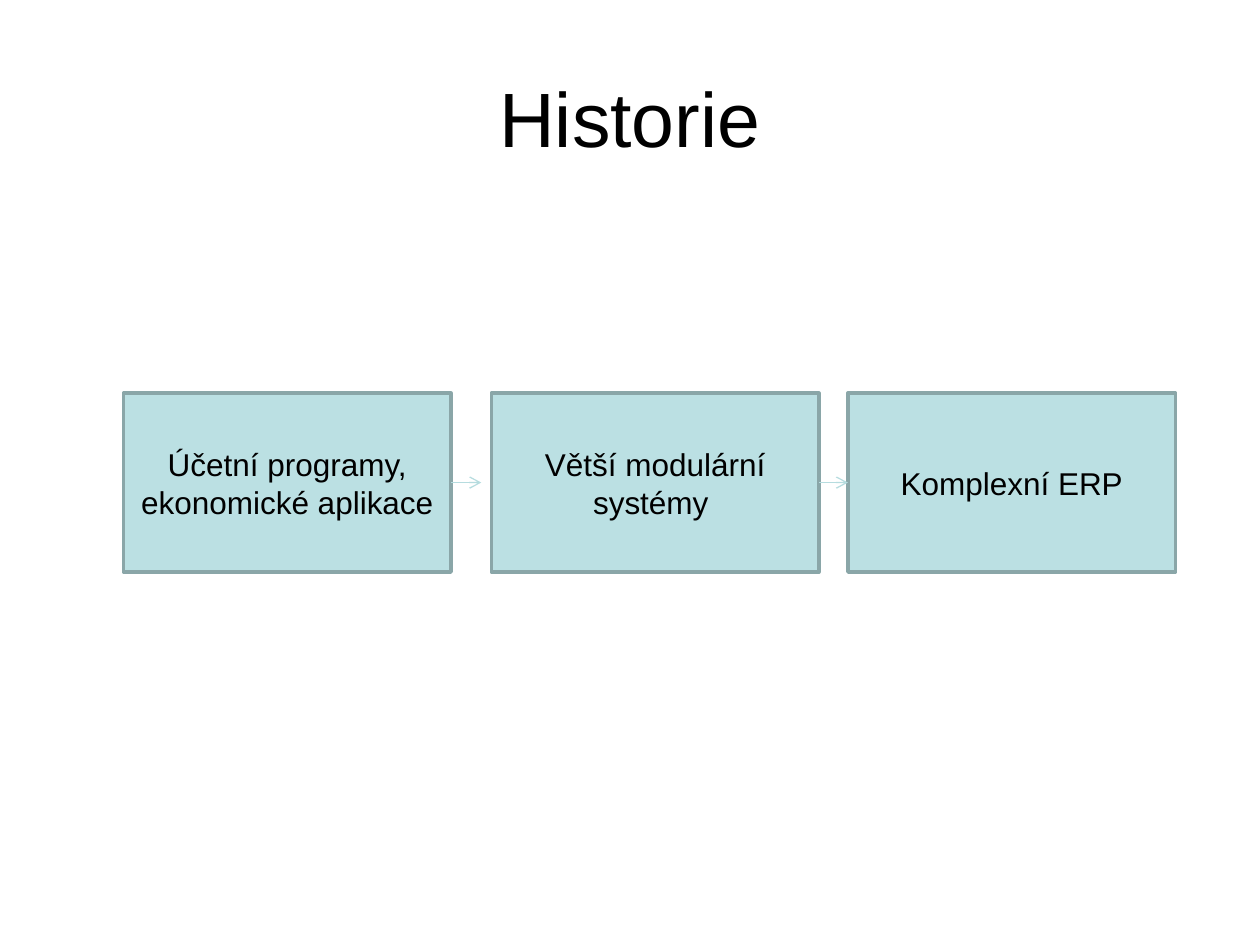
import pptx
import pptx.util
import pptx.dml.color
import pptx.enum.shapes
import pptx.enum.text
import pptx.oxml
import pptx.oxml.ns
from dataclasses import dataclass
from pptx.util import Inches


@dataclass(frozen=True)
class Theme:
    font: str = "Arial"
    text: str = "000000"
    fill: str = "BBE0E3"
    border: str = "8AA6A8"
    arrow: str = "B6DCDF"
    title_size: int = 44
    step_size: int = 18


theme = Theme()


def color(value):
    return pptx.dml.color.RGBColor.from_string(value)


def write_centered(box, text, size):
    frame = box.text_frame
    frame.word_wrap = True
    frame.vertical_anchor = pptx.enum.text.MSO_ANCHOR.MIDDLE
    frame.text = text
    para = frame.paragraphs[0]
    para.alignment = pptx.enum.text.PP_ALIGN.CENTER
    span = para.runs[0]
    span.font.name = theme.font
    span.font.size = pptx.util.Pt(size)
    span.font.color.rgb = color(theme.text)


deck = pptx.Presentation()
deck.slide_width, deck.slide_height = Inches(10), Inches(7.5)
slide = deck.slides.add_slide(deck.slide_layouts[6])

# Title
title = slide.shapes.add_textbox(Inches(0.5), Inches(0.3), Inches(9), Inches(1.25))
write_centered(title, "Historie", theme.title_size)

# Development steps
step_top, step_width, step_height = 3.12, 2.6, 1.42
steps = [
    (0.98, "Účetní programy, ekonomické aplikace"),
    (3.9, "Větší modulární systémy "),
    (6.73, "Komplexní ERP"),
]
for left, text in steps:
    step = slide.shapes.add_shape(
        pptx.enum.shapes.MSO_SHAPE.RECTANGLE,
        Inches(left), Inches(step_top), Inches(step_width), Inches(step_height))
    step.shadow.inherit = False
    step.fill.solid()
    step.fill.fore_color.rgb = color(theme.fill)
    step.line.color.rgb = color(theme.border)
    step.line.width = pptx.util.Pt(2)
    write_centered(step, text, theme.step_size)

# Arrows from the right edge of the first two steps
middle = Inches(step_top + step_height / 2)
for (left, _), end in zip(steps, (3.82, 6.73)):
    arrow = slide.shapes.add_connector(
        pptx.enum.shapes.MSO_CONNECTOR.STRAIGHT,
        Inches(left + step_width), middle, Inches(end), middle)
    arrow.line.color.rgb = color(theme.arrow)
    arrow.line.width = pptx.util.Pt(0.75)
    head = pptx.oxml.parse_xml(
        f'<a:tailEnd {pptx.oxml.ns.nsdecls("a")} type="arrow"/>')
    arrow.line._get_or_add_ln().append(head)
    arrow._element.spPr.append(
        pptx.oxml.parse_xml(f'<a:effectLst {pptx.oxml.ns.nsdecls("a")}/>'))

deck.save("out.pptx")
